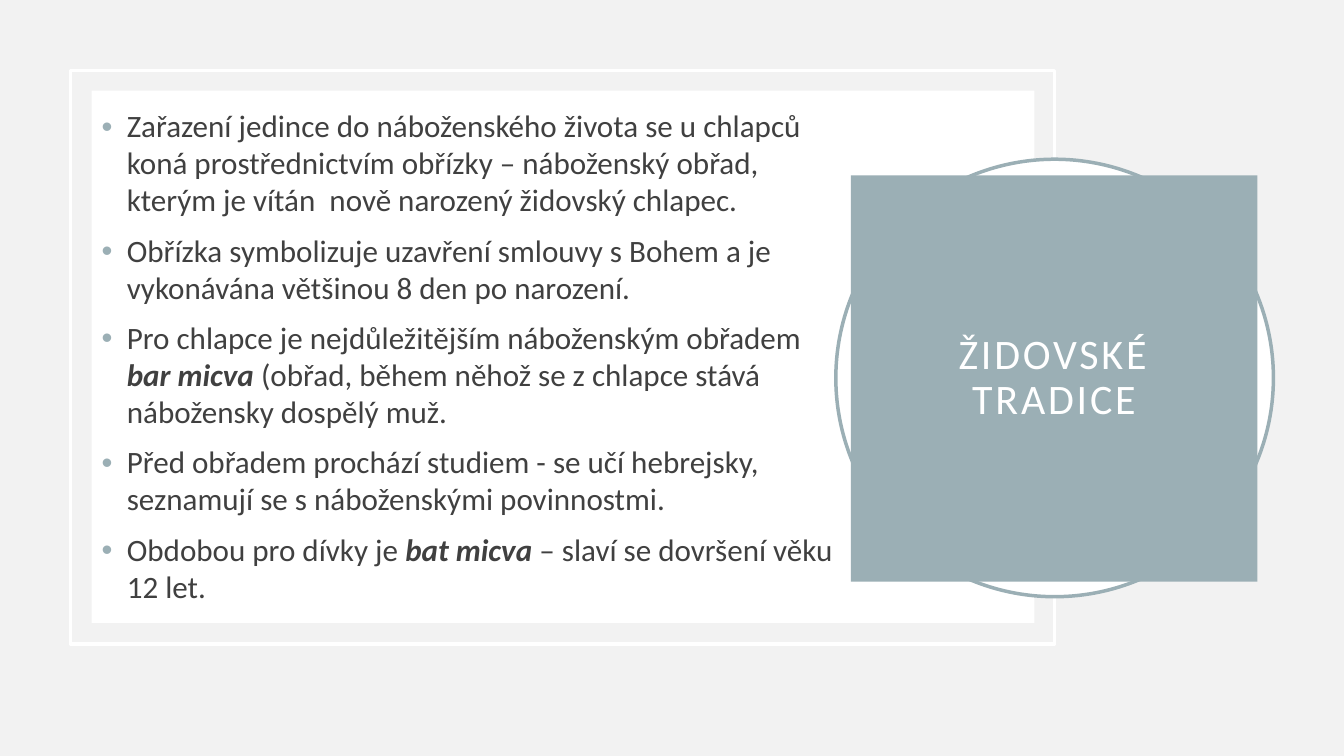
import pptx
import pptx.dml.color
import pptx.enum.shapes
import pptx.enum.text
import pptx.oxml.ns
import pptx.util
from lxml import etree
from pptx.util import Inches

COLORS = {"background": "F2F2F2", "panel": "FFFFFF", "accent": "9BAFB5", "text": "404040"}
SHAPES = pptx.enum.shapes.MSO_SHAPE
TEXT = pptx.enum.text

# Each paragraph is a list of (text, emphasised) runs.
TRADITIONS = [
    [("Zařazení jedince do náboženského života se u chlapců koná prostřednictvím obřízky – "
      "náboženský obřad, kterým je vítán  nově narozený židovský chlapec.", False)],
    [("Obřízka symbolizuje uzavření smlouvy s Bohem a je vykonávána většinou 8 den po narození.",
      False)],
    [("Pro chlapce je nejdůležitějším náboženským obřadem ", False), ("bar micva ", True),
     ("(obřad, během něhož se z chlapce stává nábožensky dospělý muž.", False)],
    [("Před obřadem prochází studiem - se učí hebrejsky, seznamují se s náboženskými "
      "povinnostmi.", False)],
    [("Obdobou pro dívky je ", False), ("bat micva ", True),
     ("– slaví se dovršení věku 12 let.", False)],
]


class SlideBuilder:
    font = "Calibri"

    def __init__(self, slide):
        self.slide = slide
        self.paint(slide.background.fill, "background")

    def color(self, name):
        return pptx.dml.color.RGBColor.from_string(COLORS[name])

    def paint(self, fill, name):
        fill.solid()
        fill.fore_color.rgb = self.color(name)

    def format_run(self, run, size, color):
        run.font.name = self.font
        run.font.size = pptx.util.Pt(size)
        run.font.color.rgb = self.color(color)

    def shape(self, kind, box, fill=None, line=None):
        shape = self.slide.shapes.add_shape(kind, *map(Inches, box))
        shape.shadow.inherit = False
        if fill:
            self.paint(shape.fill, fill)
        else:
            shape.fill.background()
        if line:
            shape.line.color.rgb = self.color(line)
            shape.line.width = pptx.util.Pt(2.5)
        else:
            shape.line.fill.background()

    def bullet(self, paragraph):
        """Give the paragraph a coloured bullet with a hanging indent."""
        properties = paragraph._p.get_or_add_pPr()
        properties.set("marL", str(Inches(0.25)))
        properties.set("indent", str(Inches(-0.25)))
        qn = pptx.oxml.ns.qn
        bullet_color = etree.SubElement(properties, qn("a:buClr"))
        etree.SubElement(bullet_color, qn("a:srgbClr"), val=COLORS["accent"])
        etree.SubElement(properties, qn("a:buFont"), typeface="Arial")
        etree.SubElement(properties, qn("a:buChar"), char="•")

    def bullet_list(self, box, items, size):
        frame = self.slide.shapes.add_textbox(*map(Inches, box)).text_frame
        frame.word_wrap = True
        frame.vertical_anchor = TEXT.MSO_ANCHOR.MIDDLE
        for index, item in enumerate(items):
            paragraph = frame.add_paragraph() if index else frame.paragraphs[0]
            paragraph.space_before = pptx.util.Pt(9.6)
            paragraph.line_spacing = 0.99
            self.bullet(paragraph)
            for text, emphasised in item:
                run = paragraph.add_run()
                run.text = text
                self.format_run(run, size, "text")
                run.font.bold = run.font.italic = emphasised

    def title(self, box, text, size):
        title = self.slide.shapes.title
        title.left, title.top, title.width, title.height = map(Inches, box)
        self.paint(title.fill, "accent")
        frame = title.text_frame
        frame.text = text
        frame.word_wrap = True
        frame.auto_size = TEXT.MSO_AUTO_SIZE.NONE
        frame.vertical_anchor = TEXT.MSO_ANCHOR.MIDDLE
        frame.margin_left = frame.margin_right = Inches(0.6)
        paragraph = frame.paragraphs[0]
        paragraph.alignment = TEXT.PP_ALIGN.CENTER
        paragraph.line_spacing = 0.9
        run = paragraph.runs[0]
        self.format_run(run, size, "panel")
        run.font._element.set("spc", "200")
        # The title lies in front of the ring.
        self.slide.shapes._spTree.append(title._element)


def main():
    deck = pptx.Presentation()
    deck.slide_width, deck.slide_height = Inches(13.33), Inches(7.5)
    builder = SlideBuilder(deck.slides.add_slide(deck.slide_layouts[5]))
    builder.shape(SHAPES.RECTANGLE, (0.7, 0.7, 9.76, 5.69), line="panel")
    builder.shape(SHAPES.RECTANGLE, (0.91, 0.9, 9.35, 5.28), fill="panel")
    builder.bullet_list((0.91, 0.9, 7.53, 5.28), TRADITIONS, 22.2)
    builder.shape(SHAPES.OVAL, (8.29, 1.58, 4.34, 4.34), fill="panel", line="accent")
    builder.title((8.44, 1.74, 4.03, 4.03), "ŽIDOVSKÉ TRADICE", 30)
    deck.save("out.pptx")


if __name__ == "__main__":
    main()
